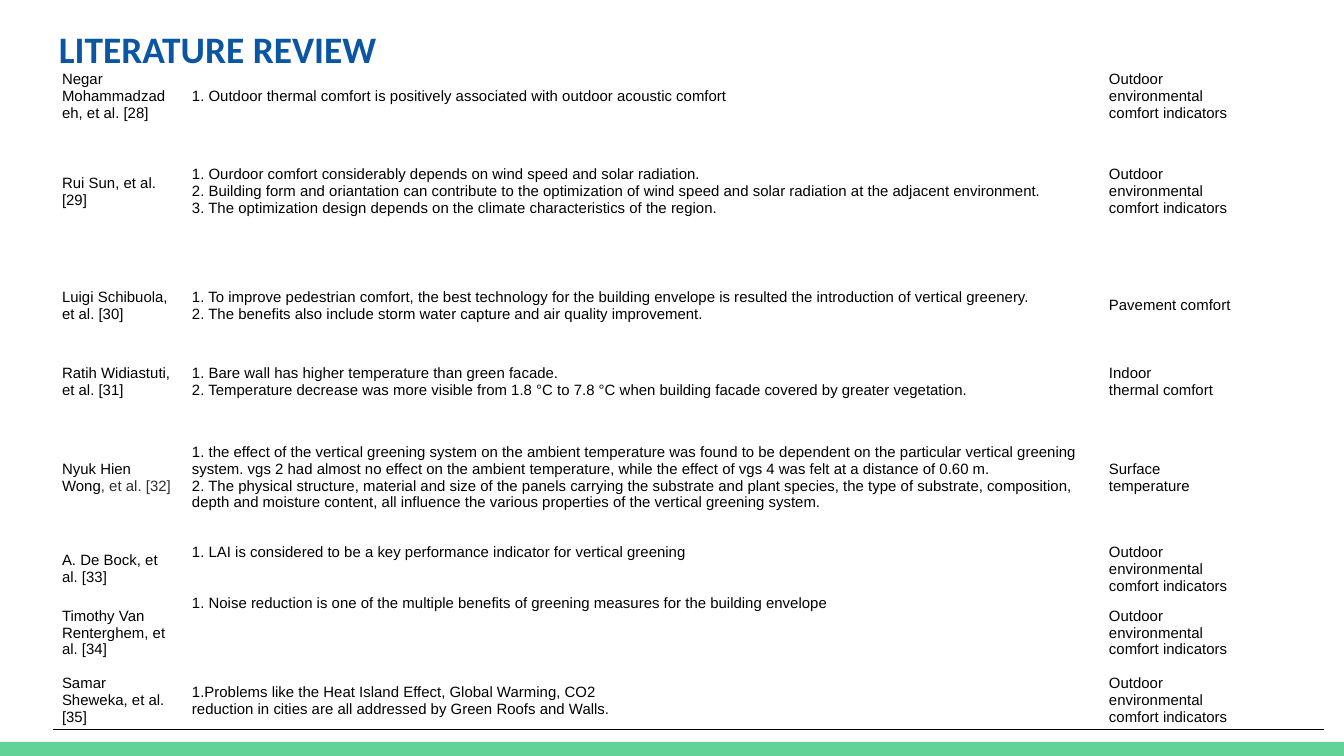
from dataclasses import dataclass

from lxml.etree import SubElement
from pptx import Presentation
from pptx.dml.color import RGBColor
from pptx.enum.shapes import MSO_SHAPE
from pptx.enum.text import MSO_ANCHOR
from pptx.oxml.ns import qn
from pptx.util import Emu, Pt

SLIDE_W, SLIDE_H = 1344, 756


@dataclass(frozen=True)
class Theme:
    heading: str = "0A55A4"
    body: str = "000000"
    muted: str = "2E2E2E"
    footer: str = "63D297"
    heading_font: str = "Calibri"
    body_font: str = "Arial"
    heading_size: int = 20
    body_size: int = 8
    rule_width: float = 0.5


THEME = Theme()
COLUMN_WIDTHS = (130, 917, 224)
OUTDOOR = ("Outdoor", "environmental", "comfort indicators")

# Row height, author runs, findings, indicator, anchor of the findings
STUDIES = [
    (58, ("Negar Mohammadzadeh, et al. [28]",),
     ("1. Outdoor thermal comfort is positively associated with outdoor acoustic comfort",),
     OUTDOOR, MSO_ANCHOR.MIDDLE),
    (133, ("Rui Sun, et al. [29]",),
     ("1. Ourdoor comfort considerably depends on wind speed and solar radiation.",
      "2. Building form and oriantation can contribute to the optimization of wind speed "
      "and solar radiation at the adjacent environment.",
      "3. The optimization design depends on the climate characteristics of the region."),
     OUTDOOR, MSO_ANCHOR.MIDDLE),
    (95, ("Luigi Schibuola, et al. [30]",),
     ("1. To improve pedestrian comfort, the best technology for the building envelope "
      "is resulted the introduction of vertical greenery.",
      "2. The benefits also include storm water capture and air quality improvement."),
     ("Pavement comfort",), MSO_ANCHOR.MIDDLE),
    (58, ("Ratih Widiastuti, et al. [31]",),
     ("1. Bare wall has higher temperature than green facade.",
      "2. Temperature decrease was more visible from 1.8 °C to 7.8 °C when building "
      "facade covered by greater vegetation."),
     ("Indoor", "thermal comfort"), MSO_ANCHOR.MIDDLE),
    (133, ("Nyuk Hien Wong", ", et al. [32]"),
     ("1. the effect of the vertical greening system on the ambient temperature was found "
      "to be dependent on the particular vertical greening system. vgs 2 had almost no "
      "effect on the ambient temperature, while the effect of vgs 4 was felt at a "
      "distance of 0.60 m.",
      "2. The physical structure, material and size of the panels carrying the substrate "
      "and plant species, the type of substrate, composition, depth and moisture content, "
      "all influence the various properties of the vertical greening system."),
     ("Surface", "temperature"), MSO_ANCHOR.MIDDLE),
    (38, ("A. De Bock, et al. [33]",),
     ("1. LAI is considered to be a key performance indicator for vertical greening",),
     OUTDOOR, MSO_ANCHOR.TOP),
    (77, ("Timothy Van Renterghem, et al. [34]",),
     ("1. Noise reduction is one of the multiple benefits of greening measures for the "
      "building envelope",),
     OUTDOOR, MSO_ANCHOR.TOP),
    (58, ("Samar Sheweka, et al. [35]",),
     ("1.Problems like the Heat Island Effect, Global Warming, CO2",
      "reduction in cities are all addressed by Green Roofs and Walls."),
     OUTDOOR, MSO_ANCHOR.MIDDLE),
]


def px(length):
    return Emu(round(length * 9144000 / SLIDE_W))


def set_attributes(target, values):
    for key, value in values.items():
        setattr(target, key, value)


def add_run(paragraph, wording, color, font, size, bold=False):
    run = paragraph.add_run()
    run.text = wording
    set_attributes(run.font, {"name": font, "size": Pt(size), "bold": bold})
    run.font.color.rgb = RGBColor.from_string(color)


def set_borders(cell, ruled_below):
    """Clear the cell's borders, save for an optional rule at the bottom."""
    properties = cell._tc.get_or_add_tcPr()
    for side in ("lnL", "lnR", "lnT", "lnB"):
        line = SubElement(properties, qn(f"a:{side}"))
        if side == "lnB" and ruled_below:
            line.set("w", str(Pt(THEME.rule_width)))
            fill = SubElement(line, qn("a:solidFill"))
            SubElement(fill, qn("a:srgbClr")).set("val", THEME.body)
        else:
            SubElement(line, qn("a:noFill"))


def fill_cell(cell, paragraphs, anchor, ruled_below):
    """Write paragraphs, each a tuple of runs; runs after the first are muted."""
    set_borders(cell, ruled_below)
    cell.fill.background()
    set_attributes(cell, {
        "margin_left": px(9), "margin_right": px(10),
        "margin_top": 0, "margin_bottom": 0, "vertical_anchor": anchor,
    })
    frame = cell.text_frame
    for index, runs in enumerate(paragraphs):
        paragraph = frame.add_paragraph() if index else frame.paragraphs[0]
        for position, wording in enumerate(runs):
            color = THEME.muted if position else THEME.body
            add_run(paragraph, wording, color, THEME.body_font, THEME.body_size)


def add_footer_band(slide, left, top, width, height):
    band = slide.shapes.add_shape(
        MSO_SHAPE.RECTANGLE, px(left), px(top), px(width), px(height))
    band.shadow.inherit = False
    band.fill.solid()
    band.fill.fore_color.rgb = RGBColor.from_string(THEME.footer)
    band.line.fill.background()


def add_heading(slide, left, top, width, height):
    heading = slide.shapes.add_textbox(px(left), px(top), px(width), px(height))
    margins = ("margin_left", "margin_top", "margin_right", "margin_bottom")
    set_attributes(heading.text_frame, {
        "word_wrap": True, "vertical_anchor": MSO_ANCHOR.TOP,
        **dict.fromkeys(margins, px(13)),
    })
    add_run(heading.text_frame.paragraphs[0], "LITERATURE REVIEW",
            THEME.heading, THEME.heading_font, THEME.heading_size, bold=True)


def add_studies(slide, left, top, width, height):
    frame = slide.shapes.add_table(
        len(STUDIES), len(COLUMN_WIDTHS), px(left), px(top), px(width), px(height))
    table = frame.table
    set_attributes(table, {"first_row": False, "horz_banding": False})
    for column, column_width in zip(table.columns, COLUMN_WIDTHS):
        column.width = px(column_width)
    for index, (row_height, author, findings, indicator, anchor) in enumerate(STUDIES):
        table.rows[index].height = px(row_height)
        last = index == len(STUDIES) - 1
        contents = (
            ([author], MSO_ANCHOR.MIDDLE),
            ([(finding,) for finding in findings], anchor),
            ([(line,) for line in indicator], MSO_ANCHOR.MIDDLE),
        )
        for cell, (paragraphs, cell_anchor) in zip(table.rows[index].cells, contents):
            fill_cell(cell, paragraphs, cell_anchor, last)


def main():
    presentation = Presentation()
    set_attributes(presentation, {
        "slide_width": px(SLIDE_W), "slide_height": px(SLIDE_H)})
    slide = presentation.slides.add_slide(presentation.slide_layouts[6])
    add_footer_band(slide, 0, 742, SLIDE_W, 14)
    add_studies(slide, 53, 67, sum(COLUMN_WIDTHS), sum(study[0] for study in STUDIES))
    add_heading(slide, 46, 13, 1253, 85)
    presentation.save("out.pptx")


if __name__ == "__main__":
    main()
